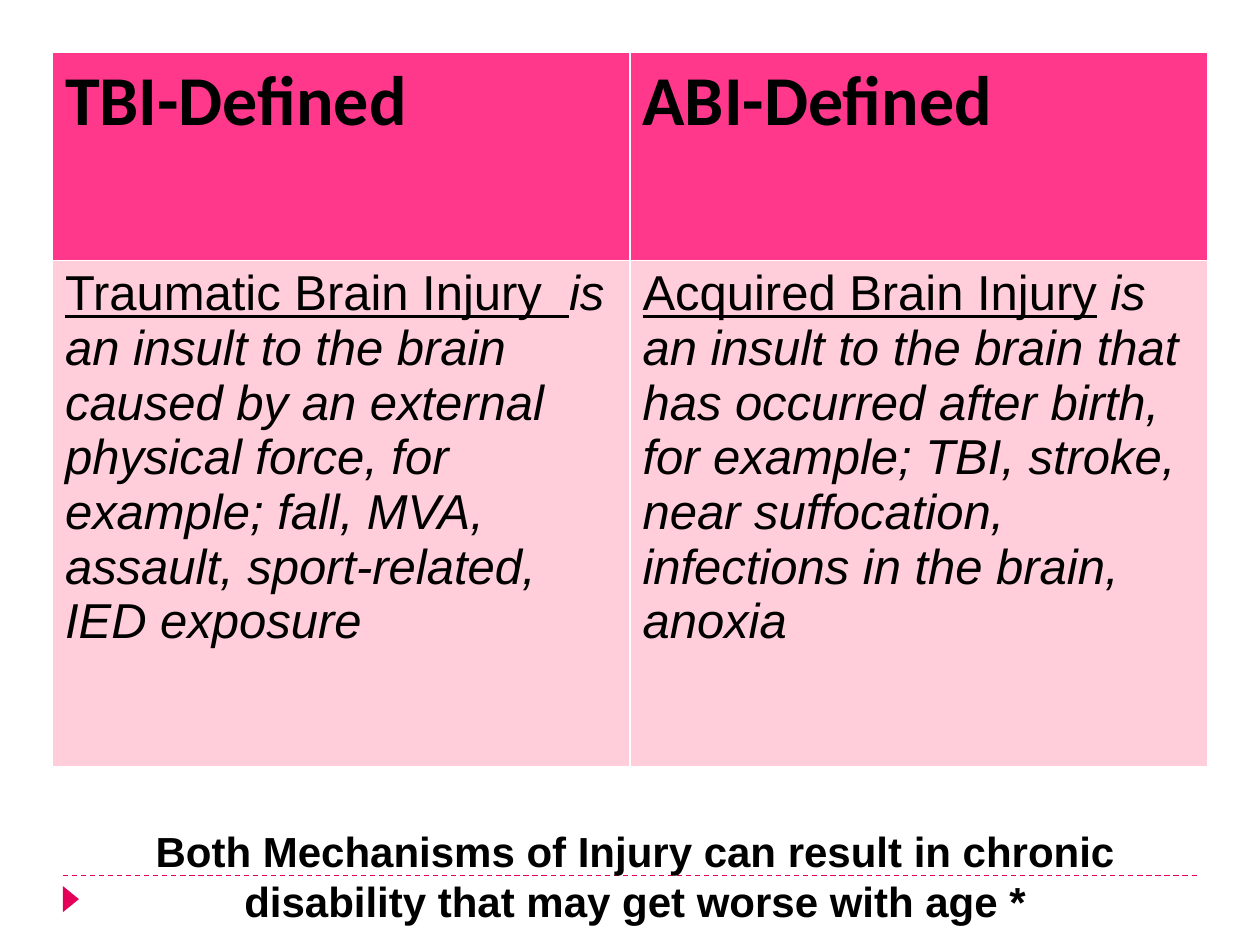
from lxml.etree import SubElement
from pptx import Presentation
from pptx.dml.color import RGBColor
from pptx.enum.dml import MSO_LINE
from pptx.enum.shapes import MSO_CONNECTOR, MSO_SHAPE
from pptx.enum.text import MSO_AUTO_SIZE, PP_ALIGN
from pptx.oxml.ns import qn
from pptx.util import Pt

BLACK = RGBColor(0x00, 0x00, 0x00)
CRIMSON = RGBColor(0xE4, 0x00, 0x59)
PINK = RGBColor(0xFF, 0x38, 0x8C)
PALE_PINK = RGBColor(0xFF, 0xCE, 0xDA)

# Heading, underlined term, italic definition
DEFINITIONS = [
    ("TBI-Defined", "Traumatic Brain Injury  ",
     "is an insult to the brain caused by an external physical force, "
     "for example; fall, MVA, assault, sport-related, IED exposure"),
    ("ABI-Defined", "Acquired Brain Injury",
     " is an insult to the brain that has occurred after birth, "
     "for example; TBI, stroke, near suffocation, infections in the brain, anoxia"),
]
CONCLUSION = ("Both Mechanisms of Injury can result in chronic disability "
              "that may get worse with age *")

TABLE_LEFT, TABLE_TOP, TABLE_WIDTH = 30, 30, 660
ROW_HEIGHTS = (118.8, 289.2)


def add_span(para, text, font_name, size, bold=False, italic=False, underline=False):
    span = para.add_run()
    span.text = text
    font = span.font
    font.name, font.size = font_name, Pt(size)
    font.bold, font.italic, font.underline = bold, italic, underline
    font.color.rgb = BLACK


def fill_cell(cell, color):
    cell.fill.solid()
    cell.fill.fore_color.rgb = color
    return cell.text_frame.paragraphs[0]


def add_footer_marks(slide):
    rule = slide.shapes.add_connector(
        MSO_CONNECTOR.STRAIGHT, Pt(36), Pt(500.4), Pt(684), Pt(500.4))
    rule.line.color.rgb = CRIMSON
    rule.line.width = Pt(0.75)
    rule.line.dash_style = MSO_LINE.DASH
    SubElement(rule.element.spPr, qn("a:effectLst"))

    marker = slide.shapes.add_shape(
        MSO_SHAPE.ISOSCELES_TRIANGLE, Pt(33), Pt(509.2), Pt(15), Pt(9.2))
    marker.rotation = 90
    marker.shadow.inherit = False
    marker.fill.solid()
    marker.fill.fore_color.rgb = CRIMSON
    marker.line.fill.background()


def add_definition_table(slide):
    table = slide.shapes.add_table(
        len(ROW_HEIGHTS), len(DEFINITIONS), Pt(TABLE_LEFT), Pt(TABLE_TOP),
        Pt(TABLE_WIDTH), Pt(sum(ROW_HEIGHTS))).table
    for row, height in zip(table.rows, ROW_HEIGHTS):
        row.height = Pt(height)
    for column, (heading, term, definition) in enumerate(DEFINITIONS):
        table.columns[column].width = Pt(TABLE_WIDTH / len(DEFINITIONS))
        para = fill_cell(table.cell(0, column), PINK)
        add_span(para, heading, "Calibri", 40, bold=True)
        para = fill_cell(table.cell(1, column), PALE_PINK)
        add_span(para, term, "Arial", 28, underline=True)
        add_span(para, definition, "Arial", 28, italic=True)


def add_conclusion(slide):
    box = slide.shapes.add_textbox(Pt(42), Pt(468), Pt(642), Pt(65.4))
    box.text_frame.word_wrap = True
    box.text_frame.auto_size = MSO_AUTO_SIZE.SHAPE_TO_FIT_TEXT
    para = box.text_frame.paragraphs[0]
    para.alignment = PP_ALIGN.CENTER
    add_span(para, CONCLUSION, "Arial", 24, bold=True)


def main():
    deck = Presentation()
    deck.slide_width, deck.slide_height = Pt(720), Pt(540)
    slide = deck.slides.add_slide(deck.slide_layouts[6])
    add_footer_marks(slide)
    add_definition_table(slide)
    add_conclusion(slide)
    deck.save("out.pptx")


if __name__ == "__main__":
    main()
